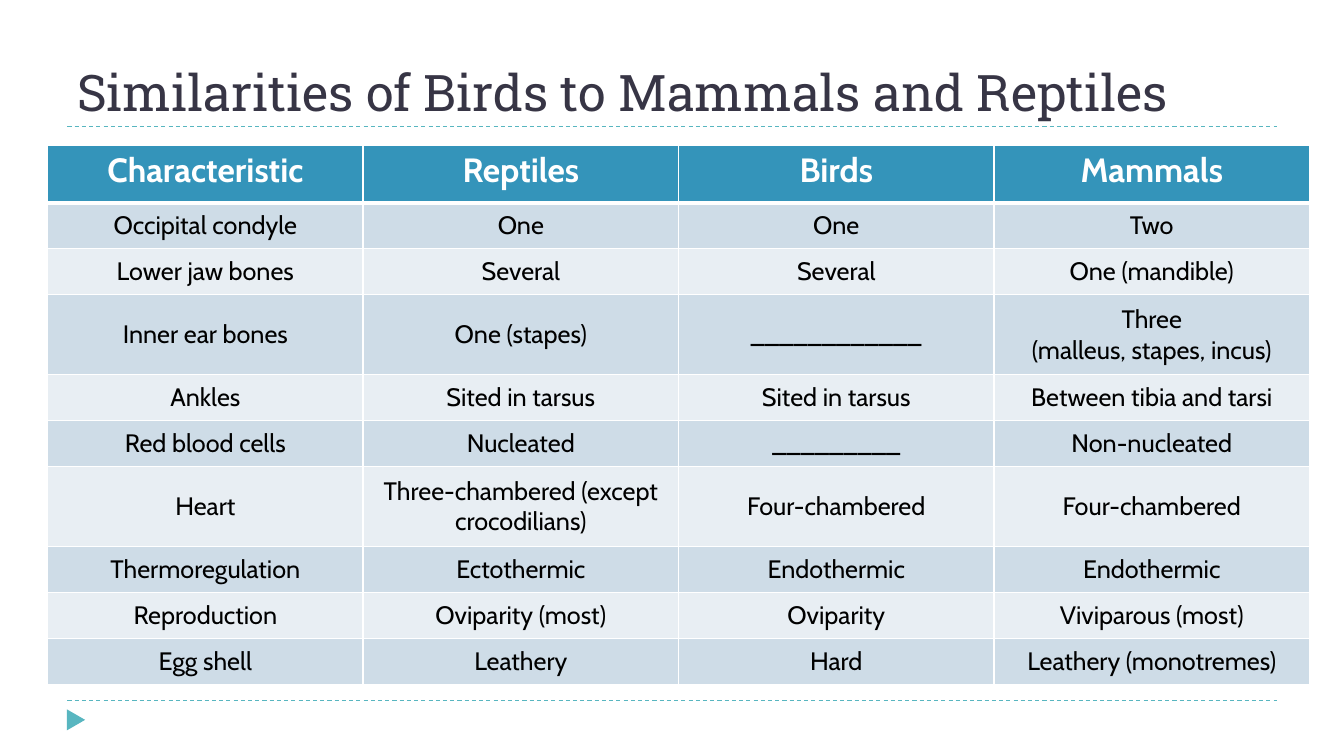
import pptx
import pptx.util
import pptx.dml.color
import pptx.enum.dml
import pptx.enum.shapes
import pptx.enum.text
import pptx.oxml
import pptx.oxml.ns
from dataclasses import dataclass
from lxml import etree
from pptx.util import Cm


@dataclass(frozen=True)
class Theme:
    title_font: str = "Roboto Slab"
    table_font: str = "Cabin"
    title_size: int = 36
    header_size: int = 24
    body_size: int = 18
    title_color: str = "373545"
    accent: str = "58B6C0"
    header_fill: str = "3494BA"
    bands: tuple = ("CEDCE7", "E8EEF3")
    white: str = "FFFFFF"
    black: str = "000000"


theme = Theme()
rgb = pptx.dml.color.RGBColor.from_string
Align = pptx.enum.text.PP_ALIGN
Anchor = pptx.enum.text.MSO_ANCHOR


def write(frame, text, font, size, color, bold=False, align=Align.LEFT):
    for index, line in enumerate(text.split("\n")):
        para = frame.paragraphs[0] if index == 0 else frame.add_paragraph()
        para.alignment = align
        span = para.add_run()
        span.text = line
        span.font.name = font
        span.font.size = pptx.util.Pt(size)
        span.font.bold = bold
        span.font.color.rgb = rgb(color)


def add_borders(cell, widths):
    properties = cell._tc.get_or_add_tcPr()
    for side, width in widths.items():
        properties.append(pptx.oxml.parse_xml(
            f'<a:ln{side} {pptx.oxml.ns.nsdecls("a")} w="{pptx.util.Pt(width)}">'
            f'<a:solidFill><a:srgbClr val="{theme.white}"/></a:solidFill></a:ln{side}>'))


deck = pptx.Presentation()
deck.slide_width = Cm(33.87)
deck.slide_height = Cm(19.05)
page = deck.slides.add_slide(deck.slide_layouts[6])

for rule_y in (17.65, 3.18):
    rule = page.shapes.add_connector(
        pptx.enum.shapes.MSO_CONNECTOR.STRAIGHT,
        Cm(1.7), Cm(rule_y), Cm(32.18), Cm(rule_y))
    rule.line.color.rgb = rgb(theme.accent)
    rule.line.width = pptx.util.Pt(0.75)
    rule.line.dash_style = pptx.enum.dml.MSO_LINE.DASH
    etree.SubElement(rule._element.spPr, pptx.oxml.ns.qn("a:effectLst"))

marker = page.shapes.add_shape(
    pptx.enum.shapes.MSO_SHAPE.ISOSCELES_TRIANGLE,
    Cm(1.65), Cm(17.91), Cm(0.53), Cm(0.46))
marker.rotation = 90
marker.shadow.inherit = False
marker.fill.solid()
marker.fill.fore_color.rgb = rgb(theme.accent)
marker.line.fill.background()

title = page.shapes.add_textbox(Cm(1.7), Cm(0.43), Cm(30.48), Cm(2.75))
title.text_frame.word_wrap = True
title.text_frame.vertical_anchor = Anchor.BOTTOM
write(title.text_frame, "Similarities of Birds to Mammals and Reptiles",
      font=theme.title_font, size=theme.title_size, color=theme.title_color)

traits = [
    ("Characteristic", "Reptiles", "Birds", "Mammals"),
    ("Occipital condyle", "One", "One", "Two"),
    ("Lower jaw bones", "Several", "Several", "One (mandible)"),
    ("Inner ear bones", "One (stapes)", "____________", "Three\n(malleus, stapes, incus)"),
    ("Ankles", "Sited in tarsus", "Sited in tarsus", "Between tibia and tarsi"),
    ("Red blood cells", "Nucleated", "_________", "Non-nucleated"),
    ("Heart", "Three-chambered (except crocodilians)", "Four-chambered", "Four-chambered"),
    ("Thermoregulation", "Ectothermic", "Endothermic", "Endothermic"),
    ("Reproduction", "Oviparity (most)", "Oviparity", "Viviparous (most)"),
    ("Egg shell", "Leathery", "Hard", "Leathery (monotremes)"),
]
header_height, row_height, tall_height = 1.45, 1.16, 2.01
tall_rows = ("Inner ear bones", "Heart")

table = page.shapes.add_table(
    len(traits), len(traits[0]), Cm(1.2), Cm(3.66), Cm(31.8), Cm(13.6)).table
for column in table.columns:
    column.width = Cm(7.95)

for row_index, trait in enumerate(traits):
    is_header = row_index == 0
    height = tall_height if trait[0] in tall_rows else row_height
    table.rows[row_index].height = Cm(header_height if is_header else height)
    for column_index, text in enumerate(trait):
        cell = table.cell(row_index, column_index)
        add_borders(cell, {"L": 1, "R": 1,
                           "T": 3 if row_index == 1 else 1,
                           "B": 3 if is_header else 1})
        cell.fill.solid()
        cell.fill.fore_color.rgb = rgb(
            theme.header_fill if is_header else theme.bands[(row_index - 1) % 2])
        cell.vertical_anchor = Anchor.TOP if is_header else Anchor.MIDDLE
        write(cell.text_frame, text, font=theme.table_font, bold=is_header,
              size=theme.header_size if is_header else theme.body_size,
              color=theme.white if is_header else theme.black,
              align=Align.CENTER)

deck.save("out.pptx")
